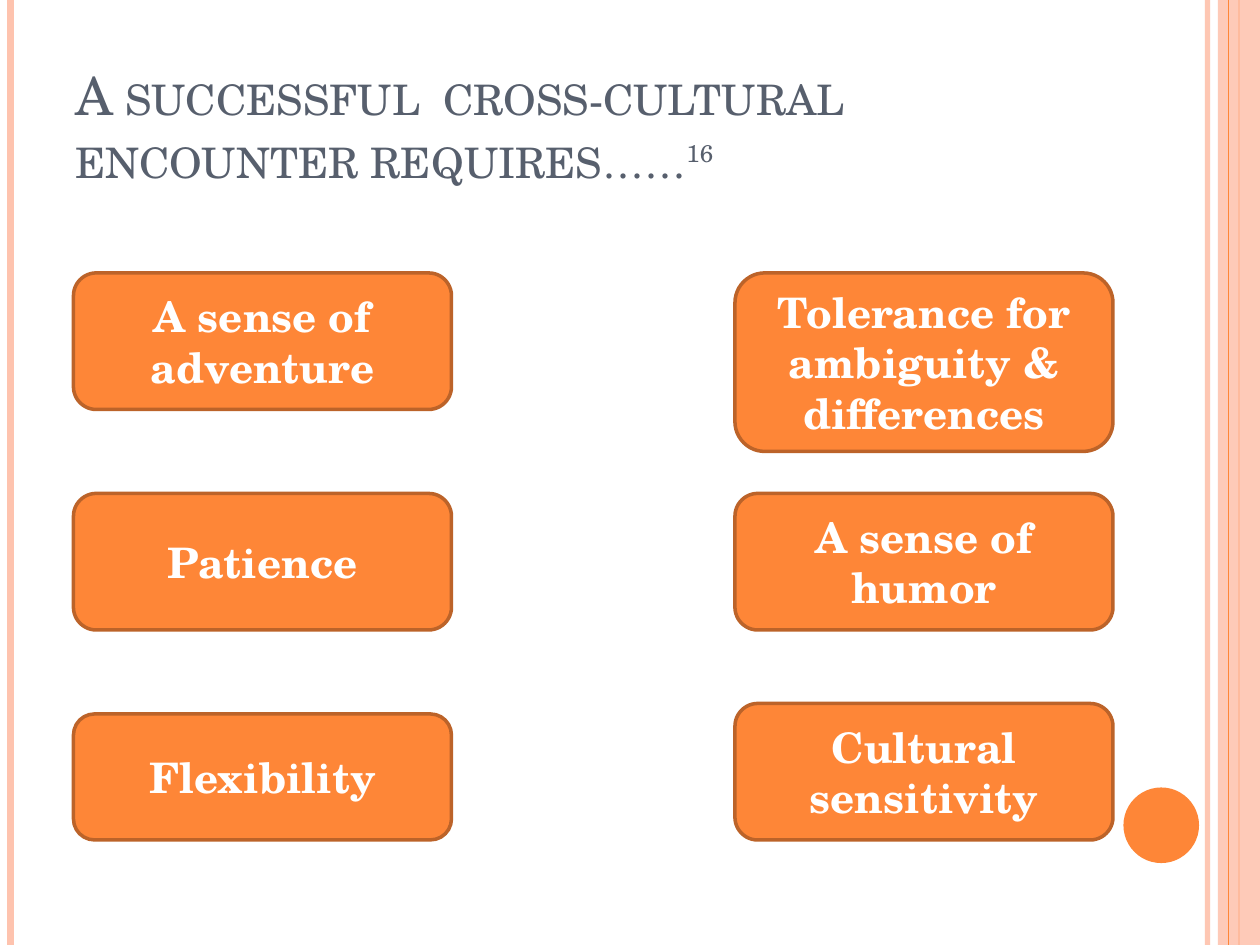
from pptx import Presentation
from pptx.dml.color import RGBColor
from pptx.enum.shapes import MSO_CONNECTOR, MSO_SHAPE
from pptx.enum.text import MSO_ANCHOR, MSO_AUTO_SIZE, PP_ALIGN
from pptx.oxml.ns import qn
from pptx.util import Inches, Pt
from lxml import etree

STRAIGHT = MSO_CONNECTOR.STRAIGHT
RECTANGLE, OVAL, ROUNDED = MSO_SHAPE.RECTANGLE, MSO_SHAPE.OVAL, MSO_SHAPE.ROUNDED_RECTANGLE
MIDDLE, BOTTOM = MSO_ANCHOR.MIDDLE, MSO_ANCHOR.BOTTOM
NO_FIT = MSO_AUTO_SIZE.NONE
LEFT, CENTER = PP_ALIGN.LEFT, PP_ALIGN.CENTER

COLUMNS, ROWS = 120, 90
ORANGE, PEACH, BROWN, SLATE, WHITE = "FE8637", "FEC3AE", "BC6329", "575F6D", "FFFFFF"


def paint(target, color, opacity=100):
    target.solid()
    target.fore_color.rgb = RGBColor.from_string(color)
    if opacity < 100:
        shade = next(target._xPr.iter(qn("a:srgbClr")))
        etree.SubElement(shade, qn("a:alpha")).set("val", str(opacity * 1000))


def apply(target, values):
    for name, value in values.items():
        setattr(target, name, value)


class Page:
    font = "TeX Gyre Schola"
    title_format = {"size": Pt(30), "bold": False}
    box_format = {"size": Pt(24), "bold": True}

    def __init__(self, deck):
        self.page = deck.slides.add_slide(deck.slide_layouts[5])
        self.shapes = self.page.shapes
        self.column = deck.slide_width / COLUMNS
        self.row = deck.slide_height / ROWS
        paint(self.page.background.fill, WHITE)

    def place(self, left, top, width, height):
        return (round(left * self.column), round(top * self.row),
                round(width * self.column), round(height * self.row))

    def add_span(self, para, text, color, values):
        span = para.add_run()
        span.text = text
        apply(span.font, {"name": self.font, **values})
        paint(span.font.fill, color)
        return span._r.get_or_add_rPr()

    def title(self, text, note, area):
        box = self.shapes.title
        apply(box, dict(zip(("left", "top", "width", "height"), self.place(*area))))
        frame = box.text_frame
        apply(frame, {"vertical_anchor": BOTTOM, "word_wrap": True, "auto_size": NO_FIT})
        para = frame.paragraphs[0]
        para.alignment = LEFT
        for words, baseline in ((text, 0), (note, 30000)):
            properties = self.add_span(para, words, SLATE, self.title_format)
            properties.set("cap", "small")
            properties.set("baseline", str(baseline))

    def stripe(self, column, color, weight, opacity=100):
        left, top, _, height = self.place(column, 0, 0, ROWS)
        line = self.shapes.add_connector(STRAIGHT, left, top, left, top + height)
        line.line.width = Pt(weight)
        paint(line.line.fill, color, opacity)
        etree.SubElement(line._element.spPr, qn("a:effectLst"))

    def shape(self, kind, area, color, opacity=100):
        shape = self.shapes.add_shape(kind, *self.place(*area))
        shape.shadow.inherit = False
        paint(shape.fill, color, opacity)
        shape.line.fill.background()
        return shape

    def box(self, text, area):
        box = self.shape(ROUNDED, area, ORANGE)
        paint(box.line.fill, BROWN)
        box.line.width = Pt(2)
        frame = box.text_frame
        apply(frame, {"vertical_anchor": MIDDLE, "word_wrap": True})
        para = frame.paragraphs[0]
        para.alignment = CENTER
        self.add_span(para, text, WHITE, self.box_format)


def main():
    deck = Presentation()
    deck.slide_width, deck.slide_height = Inches(10), Inches(7.5)
    page = Page(deck)

    page.stripe(115, PEACH, 3, 93)
    page.stripe(1, PEACH, 4.5)
    page.stripe(118, ORANGE, 1.5)
    page.shape(RECTANGLE, (116, 0, 4, ROWS), PEACH, 87)
    page.stripe(117, ORANGE, 0.75)
    page.shape(OVAL, (107, 75, 7.2, 7.2), ORANGE)

    page.title("A successful  cross-cultural encounter requires……", "16", (6, 3.6, 98, 15))

    qualities = {
        7: (("A sense of adventure", 26, 13), ("Patience", 47, 13), ("Flexibility", 68, 12)),
        70: (("Tolerance for ambiguity & differences", 26, 17),
             ("A sense of humor", 47, 13), ("Cultural sensitivity", 67, 13)),
    }
    for left, boxes in qualities.items():
        for text, top, height in boxes:
            page.box(text, (left, top, 36, height))

    deck.save("out.pptx")


if __name__ == "__main__":
    main()
